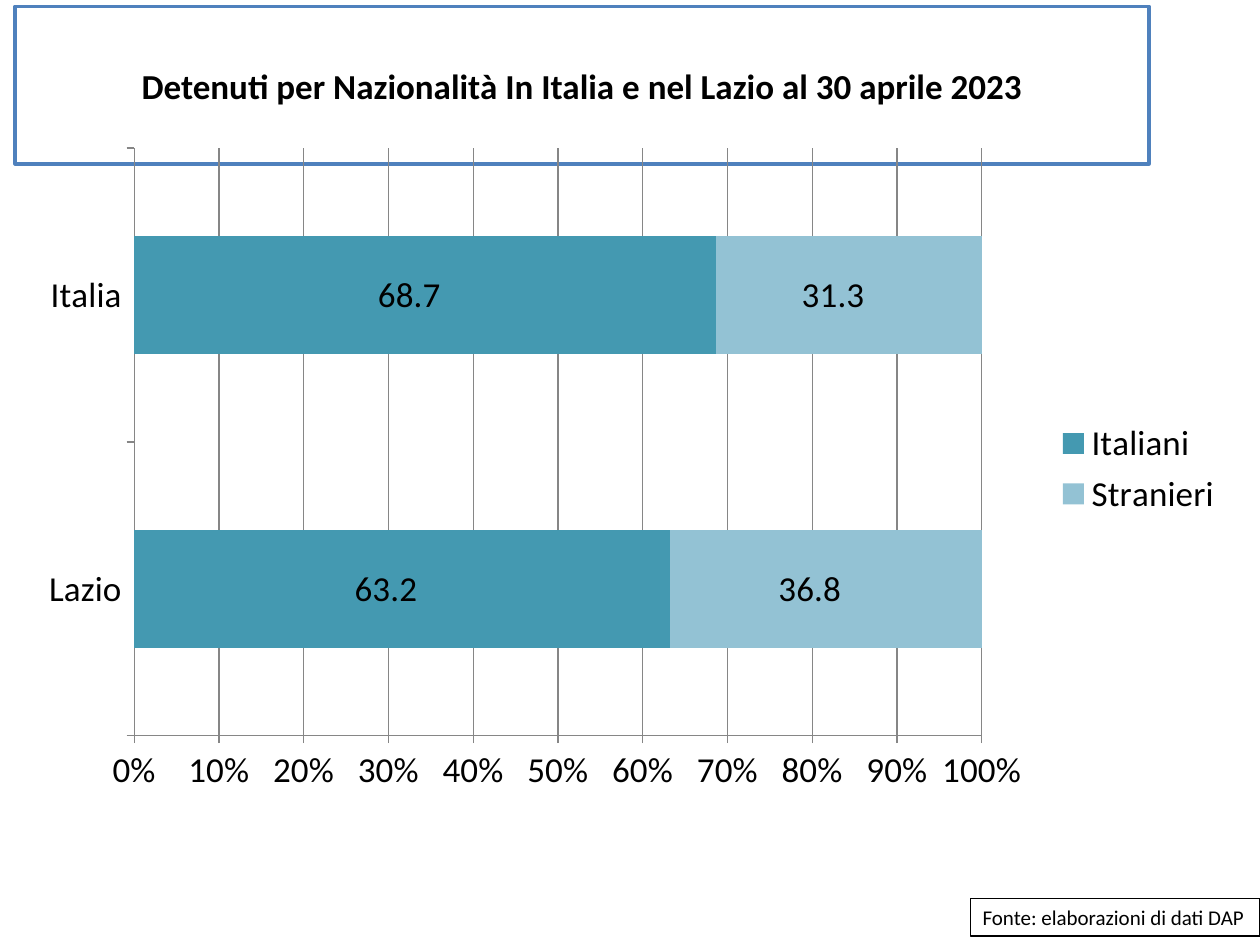
from pptx import Presentation
from pptx import util as u
from pptx.chart.data import CategoryChartData
from pptx.dml.color import RGBColor
from pptx.enum import chart as ch, shapes, text
from pptx.oxml import parse_xml
from pptx.oxml.ns import nsdecls

# Content
TITLE = "Detenuti per Nazionalità In Italia e nel Lazio al 30 aprile 2023"
SOURCE = "Fonte: elaborazioni di dati DAP"
REGIONS = ["Lazio", "Italia"]
SERIES = [("Italiani", [63.2, 68.7], "4499B1"),
          ("Stranieri", [36.8, 31.3], "93C2D4")]

THEME = dict(font="Calibri", text="000000", paper="FFFFFF", border="4F81BD",
             grid="868686", title=20, chart=20, source=12)
LABEL_FORMAT = "#,##0.0\\ _€_-"
PLOT = dict(x=0.09, y=0.02, w=0.7, h=0.88)  # inner plot area, shares of the chart


def color(name):
    return RGBColor.from_string(THEME.get(name, name))


def style_font(font, size, **extra):
    values = dict(name=THEME["font"], size=u.Pt(THEME[size]), **extra)
    for key, value in values.items():
        setattr(font, key, value)
    font.color.rgb = color("text")


def style_line(line, name, width):
    line.color.rgb = color(name)
    line.width = u.Pt(width)


def add_box(s, box, words, size, border, width, frame, align, bold=False):
    sp = s.shapes.add_shape(shapes.MSO_SHAPE.RECTANGLE, *map(u.Inches, box))
    sp.shadow.inherit = False
    sp.fill.solid()
    sp.fill.fore_color.rgb = color("paper")
    style_line(sp.line, border, width)
    tf = sp.text_frame
    for key, value in frame.items():
        setattr(tf, key, value)
    p = tf.paragraphs[0]
    p.alignment = align
    r = p.add_run()
    r.text = words
    style_font(r.font, size, bold=bold)


def add_bars(s, box):
    data = CategoryChartData(number_format="0.0")
    data.categories = REGIONS
    for name, values, _ in SERIES:
        data.add_series(name, values)
    chart = s.shapes.add_chart(ch.XL_CHART_TYPE.BAR_STACKED_100,
                               *map(u.Inches, box), data).chart
    style_font(chart.font, "chart")
    chart.has_title = False

    # Legend
    chart.has_legend = True
    chart.legend.position = ch.XL_LEGEND_POSITION.RIGHT
    chart.legend.include_in_layout = False

    # Bars and their labels
    plot = chart.plots[0]
    plot.gap_width, plot.overlap, plot.vary_by_categories = 150, 100, False
    for series, (_, _, fill) in zip(plot.series, SERIES):
        series.format.fill.solid()
        series.format.fill.fore_color.rgb = color(fill)
        labels = series.data_labels
        formats = dict(show_value=True, number_format=LABEL_FORMAT,
                       number_format_is_linked=False,
                       position=ch.XL_LABEL_POSITION.CENTER)
        for key, value in formats.items():
            setattr(labels, key, value)
        style_font(labels.font, "chart")

    # Axes and gridlines
    for axis in (chart.category_axis, chart.value_axis):
        axis.major_tick_mark = ch.XL_TICK_MARK.OUTSIDE
        axis.minor_tick_mark = ch.XL_TICK_MARK.NONE
        style_line(axis.format.line, "grid", 0.75)
    axis = chart.value_axis
    axis.minimum_scale, axis.maximum_scale, axis.major_unit = 0, 1, 0.1
    axis.tick_labels.number_format = "0%"
    axis.tick_labels.number_format_is_linked = False
    axis.has_major_gridlines = True
    style_line(axis.major_gridlines.format.line, "grid", 0.75)

    # Fixed plot area
    area = chart._chartSpace.chart.plotArea
    for old in area.findall("{*}layout"):
        area.remove(old)
    modes = '<c:xMode val="edge"/><c:yMode val="edge"/>'
    sizes = "".join(f'<c:{k} val="{v}"/>' for k, v in PLOT.items())
    area.insert(0, parse_xml(
        f'<c:layout {nsdecls("c")}><c:manualLayout><c:layoutTarget val="inner"/>'
        f'{modes}{sizes}</c:manualLayout></c:layout>'))


def main():
    prs = Presentation()
    prs.slide_width, prs.slide_height = u.Inches(10), u.Inches(7.5)
    s = prs.slides.add_slide(prs.slide_layouts[6])
    middle = text.MSO_ANCHOR.MIDDLE

    # Title, source note, chart
    add_box(s, (0.12, 0.05, 9, 1.25), TITLE, "title", "border", 2,
            dict(word_wrap=True, vertical_anchor=middle),
            text.PP_ALIGN.CENTER, bold=True)
    add_box(s, (7.7, 7.13, 2.3, 0.3), SOURCE, "source", "text", 0.75,
            dict(word_wrap=False, vertical_anchor=text.MSO_ANCHOR.TOP,
                 auto_size=text.MSO_AUTO_SIZE.SHAPE_TO_FIT_TEXT),
            text.PP_ALIGN.LEFT)
    add_bars(s, (0.2, 1.07, 9.61, 5.3))
    prs.save("out.pptx")


if __name__ == "__main__":
    main()
